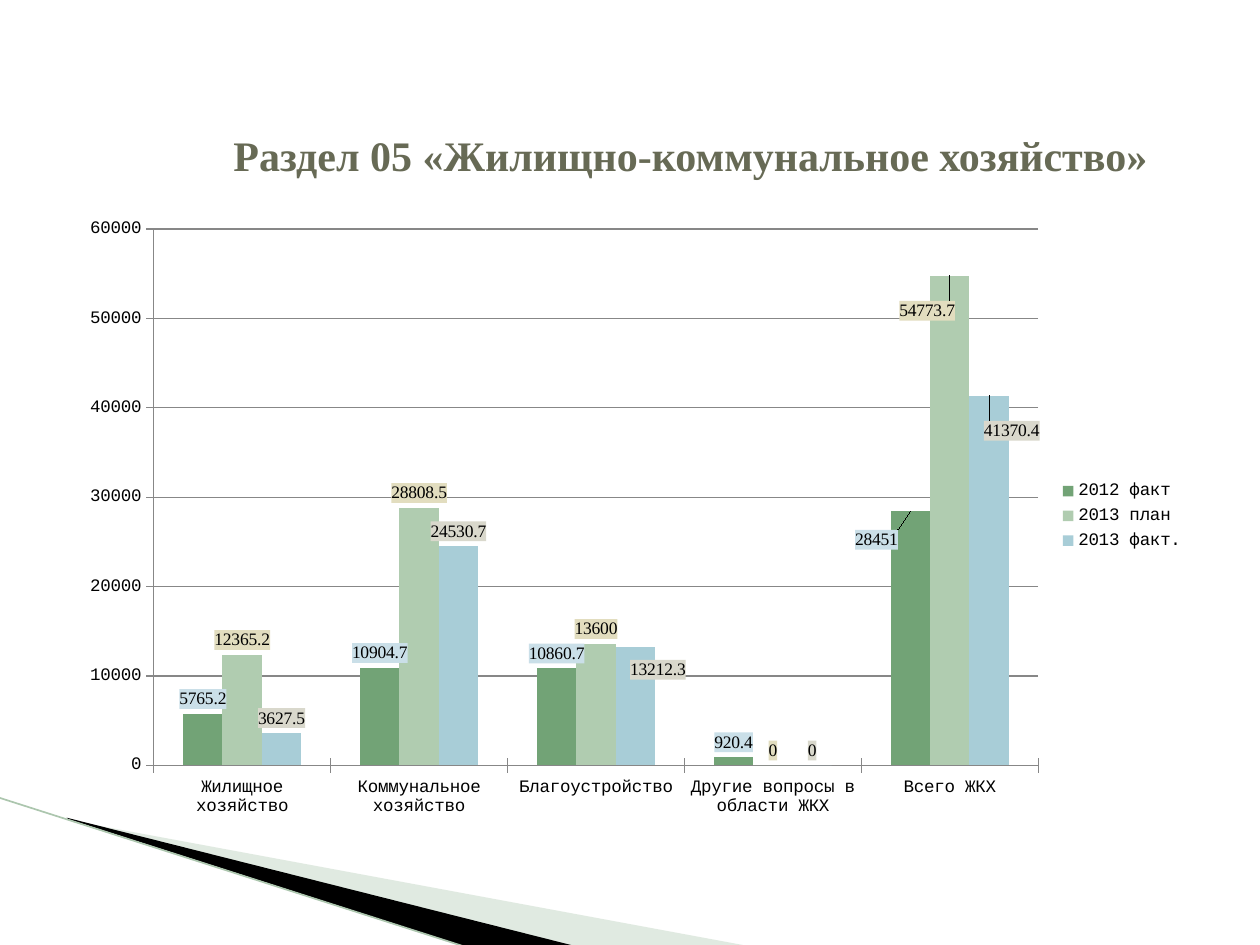
from lxml import etree
from pptx import Presentation
from pptx.chart.data import CategoryChartData
from pptx.dml.color import RGBColor
from pptx.enum.chart import (XL_CHART_TYPE, XL_LABEL_POSITION,
                             XL_LEGEND_POSITION, XL_TICK_MARK)
from pptx.enum.text import MSO_ANCHOR, PP_ALIGN
from pptx.oxml import parse_xml
from pptx.oxml.ns import nsdecls, qn
from pptx.util import Inches, Pt

COLUMN = XL_CHART_TYPE.COLUMN_CLUSTERED
OUTER = XL_LABEL_POSITION.OUTSIDE_END
RIGHT = XL_LEGEND_POSITION.RIGHT
CROSS = XL_TICK_MARK.CROSS
CENTER = PP_ALIGN.CENTER
MIDDLE = MSO_ANCHOR.MIDDLE

# Content
SERIF, MONO = "Times New Roman", "Courier New"
HUES = {"title": "676A55", "text": "000000", "grid": "878787",
        "pale": "B3CBB5", "dark": "000000", "edge": "ACC6AE"}
TITLE = "Раздел 05 «Жилищно-коммунальное хозяйство»"
CATS = ["Жилищное хозяйство", "Коммунальное хозяйство", "Благоустройство",
        "Другие вопросы в области ЖКХ", "Всего ЖКХ"]
# Moved labels: point index -> shift as a share of the chart size
SERIES = [
    {"name": "2012 факт", "vals": [5765.2, 10904.7, 10860.7, 920.4, 28451],
     "bar": "72A376", "tag": "CADFE8", "moved": {4: (-0.03, 0.07)}},
    {"name": "2013 план", "vals": [12365.2, 28808.5, 13600, 0, 54773.7],
     "bar": "B0CCB0", "tag": "E2DDBF", "moved": {4: (-0.02, 0.08)}},
    {"name": "2013 факт.", "vals": [3627.5, 24530.7, 13212.3, 0, 41370.4],
     "bar": "A8CDD7", "tag": "D9D8CC",
     "moved": {2: (0.02, 0.06), 4: (0.02, 0.08)}},
]
# Corner wedges: fill, opacity in percent, points in inches
WEDGES = [
    ("pale", 40, [(0.55, 6.51), (5.95, 7.51), (4.56, 7.51), (0.55, 6.5)]),
    ("dark", 100, [(0.53, 6.49), (4.57, 7.51), (3.72, 7.52), (0.54, 6.5)]),
]


def rgb(hue):
    return RGBColor.from_string(hue)


def style(font, size=10, face=MONO, hue=HUES["text"], bold=False):
    font.size, font.name, font.bold = Pt(size), face, bold
    font.color.rgb = rgb(hue)


def put_text(box, text, align=CENTER, anchor=MIDDLE, **form):
    frame = box.text_frame
    frame.word_wrap = True
    frame.vertical_anchor = anchor
    para = frame.paragraphs[0]
    para.alignment = align
    run = para.add_run()
    run.text = text
    style(run.font, **form)


def add_wedge(shapes, hue, alpha, spots):
    spots = [(x * 100, y * 100) for x, y in spots]
    pen = shapes.build_freeform(*spots[0], scale=Inches(0.01))
    pen.add_line_segments(spots[1:], close=True)
    wedge = pen.convert_to_shape()
    wedge.shadow.inherit = False
    wedge.fill.solid()
    wedge.fill.fore_color.rgb = rgb(HUES[hue])
    wedge.line.fill.background()
    if alpha < 100:
        tint = wedge._element.spPr.find(".//" + qn("a:srgbClr"))
        etree.SubElement(tint, qn("a:alpha"), val=str(alpha * 1000))


def layout_xml(inner=False, **parts):
    kind = '<c:layoutTarget val="inner"/>' if inner else ""
    modes = "".join(f'<c:{k}Mode val="edge"/>' for k in "xy") if inner else ""
    rest = "".join(f'<c:{k} val="{v}"/>' for k, v in parts.items())
    return parse_xml(f'<c:layout {nsdecls("c")}><c:manualLayout>{kind}{modes}'
                     f'{rest}</c:manualLayout></c:layout>')


def add_labels(ser, info):
    labels = ser.data_labels
    labels.show_value = True
    labels.position = OUTER
    style(labels.font, face=SERIF)
    for idx in info["moved"]:
        label = ser.points[idx].data_label
        style(label.font, face=SERIF)
        label.position = OUTER
    root = ser._element.find(qn("c:dLbls"))
    for node in root.findall(qn("c:dLbl")):
        mark = node.find(qn("c:idx"))
        dx, dy = info["moved"][int(mark.get("val"))]
        mark.addnext(layout_xml(x=dx, y=dy))
    # Tinted background for every label
    for text in list(root.iter(qn("c:txPr"))):
        for old in text.getparent().findall(qn("c:spPr")):
            text.getparent().remove(old)
        text.addprevious(parse_xml(
            f'<c:spPr {nsdecls("c", "a")}><a:solidFill><a:srgbClr '
            f'val="{info["tag"]}"/></a:solidFill></c:spPr>'))


def add_bars(shapes):
    data = CategoryChartData()
    data.categories = CATS
    for info in SERIES:
        data.add_series(info["name"], info["vals"])
    chart = shapes.add_chart(COLUMN, Inches(0.5), Inches(1.62), Inches(9),
                             Inches(4.95), data).chart
    style(chart.font)
    chart.has_title = False
    chart.has_legend = True
    chart.legend.position = RIGHT
    chart.legend.include_in_layout = False
    plot = chart.plots[0]
    plot.vary_by_categories = False
    plot.gap_width, plot.overlap = 150, 0
    for axis in (chart.category_axis, chart.value_axis):
        axis.major_tick_mark = CROSS
        axis.format.line.color.rgb = rgb(HUES["grid"])
    scale = chart.value_axis
    scale.minimum_scale, scale.maximum_scale = 0, 60000
    scale.major_unit = 10000
    scale.major_gridlines.format.line.color.rgb = rgb(HUES["grid"])
    for ser, info in zip(plot.series, SERIES):
        ser.format.fill.solid()
        ser.format.fill.fore_color.rgb = rgb(info["bar"])
        add_labels(ser, info)
    # Fixed plot area
    area = chart._chartSpace.find(".//" + qn("c:plotArea"))
    for old in area.findall(qn("c:layout")):
        area.remove(old)
    area.insert(0, layout_xml(inner=True, x=0.08, y=0.04, w=0.78, h=0.86))


def main():
    deck = Presentation()
    deck.slide_width, deck.slide_height = Inches(10), Inches(7.5)
    slide = deck.slides.add_slide(deck.slide_layouts[5])
    shapes = slide.shapes

    # Corner decoration
    for wedge in WEDGES:
        add_wedge(shapes, *wedge)
    edge = shapes.add_connector(1, Inches(-0.01), Inches(6.33),
                                Inches(3.71), Inches(7.52))
    edge.line.color.rgb = rgb(HUES["edge"])
    edge.line.width = Pt(0.95)
    etree.SubElement(edge._element.spPr, qn("a:effectLst"))

    # Title
    title = shapes.title
    title.left, title.top = Inches(1.46), Inches(0.44)
    title.width, title.height = Inches(8.04), Inches(1.57)
    put_text(title, TITLE, size=24, face=SERIF, hue=HUES["title"], bold=True)

    # Chart
    add_bars(shapes)
    deck.save("out.pptx")


if __name__ == "__main__":
    main()
